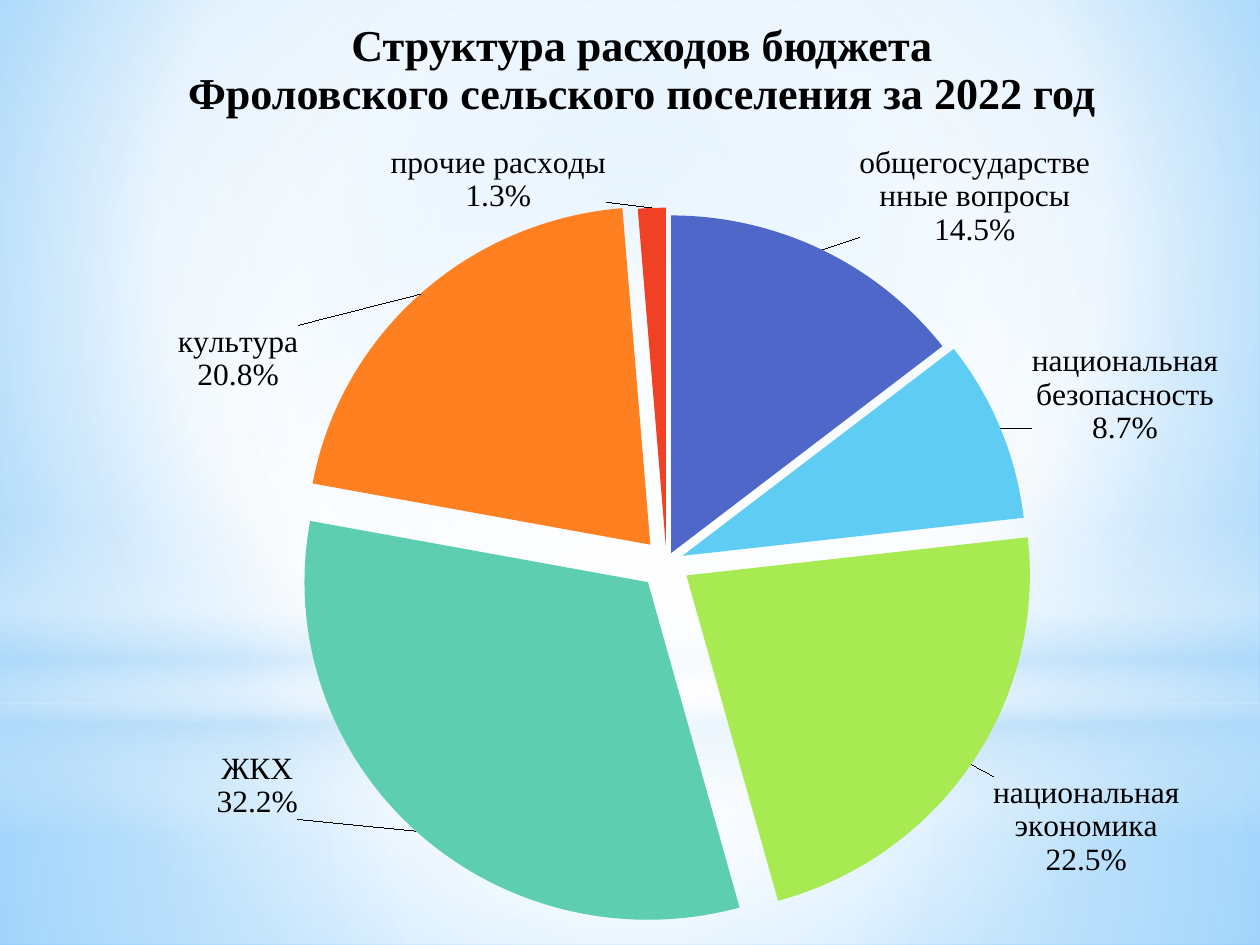
import pptx
import pptx.chart.data
import pptx.dml.color
import pptx.enum.chart
import pptx.enum.shapes
import pptx.enum.text
import pptx.oxml
import pptx.oxml.ns
import pptx.util

Inches = pptx.util.Inches
Pt = pptx.util.Pt
FONT = "Times New Roman"
HUES = {"black": "000000", "white": "FFFFFF", "pale": "B4DCFA",
        "sky": "9ED5FF", "deep": "5BB9FF", "indigo": "4E67C8",
        "azure": "5ECCF3", "lime": "A7EA52", "teal": "5DCEAF",
        "orange": "FF8021", "red": "F14124"}
TITLE = ["Структура расходов бюджета", "Фроловского сельского поселения за 2022 год"]
# name, share, colour, explosion, label shift as parts of the chart
SLICES = [
    ("общегосударственные вопросы", 0.145, "indigo", 3, (0.028, -0.008)),
    ("национальная безопасность", 0.087, "azure", 5, (0.02, 0.025)),
    ("национальная экономика", 0.225, "lime", 7, (0.013, 0.01)),
    ("ЖКХ", 0.322, "teal", 8, (-0.093, -0.109)),
    ("культура", 0.208, "orange", 7, (-0.096, 0.134)),
    ("прочие расходы", 0.013, "red", 5, (-0.126, 0.002)),
]
CENTRE = (50, 50, 50, 50)
# shape, left, top, width, height, stops (place, colour, opacity), focus
GLOWS = [
    ("RECTANGLE", 0, 5.58, 10, 1.92,
     [(0, "white", 91), (37, "white", 76), (100, "pale", 79)], CENTRE),
    ("RECTANGLE", 0, 0, 10, 5.58,
     [(0, "white", 89), (48, "white", 62), (100, "pale", 79)], CENTRE),
    ("RECTANGLE", 0, 4.12, 10, 2.5,
     [(0, "white", 0), (29, "white", 30), (45, "pale", 40),
      (55, "white", 26), (65, "pale", 60), (100, "white", 0)], None),
    ("OVAL", 0, 1.75, 10, 5.58,
     [(0, "white", 100), (56, "white", 0)], CENTRE),
]


def color(name):
    return pptx.dml.color.RGBColor.from_string(HUES[name])


def parse(tag, body):
    space = pptx.oxml.ns.nsdecls("a", "c")
    return pptx.oxml.parse_xml(f"<{tag} {space}>{body}</{tag}>")


def shade(fill, host, stops, focus):
    """Give host a gradient; without a focus it runs downwards."""
    fill.solid()
    marks = "".join(
        f'<a:gs pos="{place * 1000}"><a:srgbClr val="{HUES[hue]}">'
        f'<a:alpha val="{part * 1000}"/></a:srgbClr></a:gs>'
        for place, hue, part in stops)
    way = '<a:lin ang="5400000" scaled="0"/>'
    if focus:
        rect = " ".join(f'{side}="{val * 1000}"' for side, val in zip("ltrb", focus))
        way = f'<a:path path="circle"><a:fillToRect {rect}/></a:path>'
    solid = host.find(pptx.oxml.ns.qn("a:solidFill"))
    host.replace(solid, parse("a:gradFill", f"<a:gsLst>{marks}</a:gsLst>{way}"))


def add_glow(slide, kind, left, top, width, height, stops, focus):
    form = getattr(pptx.enum.shapes.MSO_SHAPE, kind)
    shape = slide.shapes.add_shape(
        form, Inches(left), Inches(top), Inches(width), Inches(height))
    shape.shadow.inherit = False
    shape.line.fill.background()
    shade(shape.fill, shape._element.spPr, stops, focus)


def add_title(slide):
    box = slide.shapes.add_textbox(Inches(0.35), Inches(0.13), Inches(9.49), Inches(0.87))
    frame = box.text_frame
    frame.word_wrap = True
    frame.vertical_anchor = pptx.enum.text.MSO_ANCHOR.MIDDLE
    frame.text = "\n".join(TITLE)
    for line in frame.paragraphs:
        line.alignment = pptx.enum.text.PP_ALIGN.CENTER
        line.line_spacing = 0.9
        line.font.name = FONT
        line.font.size = Pt(25.2)
        line.font.bold = True
        line.font.color.rgb = color("black")


def layout(**parts):
    vals = "".join(f'<c:{key} val="{val}"/>' for key, val in parts.items())
    return parse("c:layout", f"<c:manualLayout>{vals}</c:manualLayout>")


def add_labels(plot):
    """Label each slice with its name and share, moved off the pie."""
    shows = ('<c:dLblPos val="bestFit"/><c:showLegendKey val="0"/><c:showVal val="1"/>'
             '<c:showCatName val="1"/><c:showSerName val="0"/><c:showPercent val="0"/>'
             '<c:showBubbleSize val="0"/><c:separator>\n</c:separator>')
    look = ('<c:numFmt formatCode="0.0%" sourceLinked="0"/><c:spPr><a:noFill/></c:spPr>'
            '<c:txPr><a:bodyPr/><a:p><a:pPr><a:defRPr sz="1800"><a:solidFill>'
            f'<a:srgbClr val="{HUES["black"]}"/></a:solidFill><a:latin typeface="{FONT}"/>'
            '</a:defRPr></a:pPr><a:endParaRPr lang="ru-RU"/></a:p></c:txPr>')
    labels = parse("c:dLbls", look + shows + '<c:showLeaderLines val="1"/>')
    for spot, (*_, (right, down)) in enumerate(SLICES):
        label = parse("c:dLbl", f'<c:idx val="{spot}"/>' + look + shows)
        label.insert(1, layout(x=right, y=down))
        labels.insert(spot, label)
    series = plot.series[0]._element
    series.find(pptx.oxml.ns.qn("c:cat")).addprevious(labels)


def add_pie(slide):
    data = pptx.chart.data.CategoryChartData(number_format="0.0%")
    data.categories = [item[0] for item in SLICES]
    data.add_series("Series 1", [item[1] for item in SLICES])
    chart = slide.shapes.add_chart(
        pptx.enum.chart.XL_CHART_TYPE.PIE, Inches(0.2), Inches(1.06),
        Inches(9.65), Inches(6.24), data).chart
    chart.has_legend = False
    chart.has_title = False
    chart.font.name = "Cabin"
    chart.font.size = Pt(18)
    chart.font.color.rgb = color("black")
    plot = chart.plots[0]
    plot.vary_by_categories = True
    # Slices
    for spot, (_, _, hue, burst, _) in enumerate(SLICES):
        point = plot.series[0].points[spot]
        point.format.fill.solid()
        point.format.fill.fore_color.rgb = color(hue)
        point.format.line.fill.background()
        mark = parse("c:explosion", "")
        mark.set("val", str(burst))
        point.format._element.find(pptx.oxml.ns.qn("c:spPr")).addprevious(mark)
    add_labels(plot)
    # Plot area
    area = chart._chartSpace.chart.plotArea
    for old in area.findall(pptx.oxml.ns.qn("c:layout")):
        area.remove(old)
    area.insert(0, layout(layoutTarget="inner", xMode="edge", yMode="edge",
                          x=0.245, y=0.101, w=0.565, h=0.875))


def main():
    deck = pptx.Presentation()
    deck.slide_width, deck.slide_height = Inches(10), Inches(7.5)
    slide = deck.slides.add_slide(deck.slide_layouts[6])
    # Background
    fill = slide.background.fill
    host = slide._element.find(".//" + pptx.oxml.ns.qn("p:bgPr"))
    shade(fill, host, [(0, "sky", 100), (60, "white", 100), (100, "deep", 100)],
          (20, 10, 20, 60))
    for glow in GLOWS:
        add_glow(slide, *glow)
    # Content
    add_title(slide)
    add_pie(slide)
    deck.save("out.pptx")


if __name__ == "__main__":
    main()
